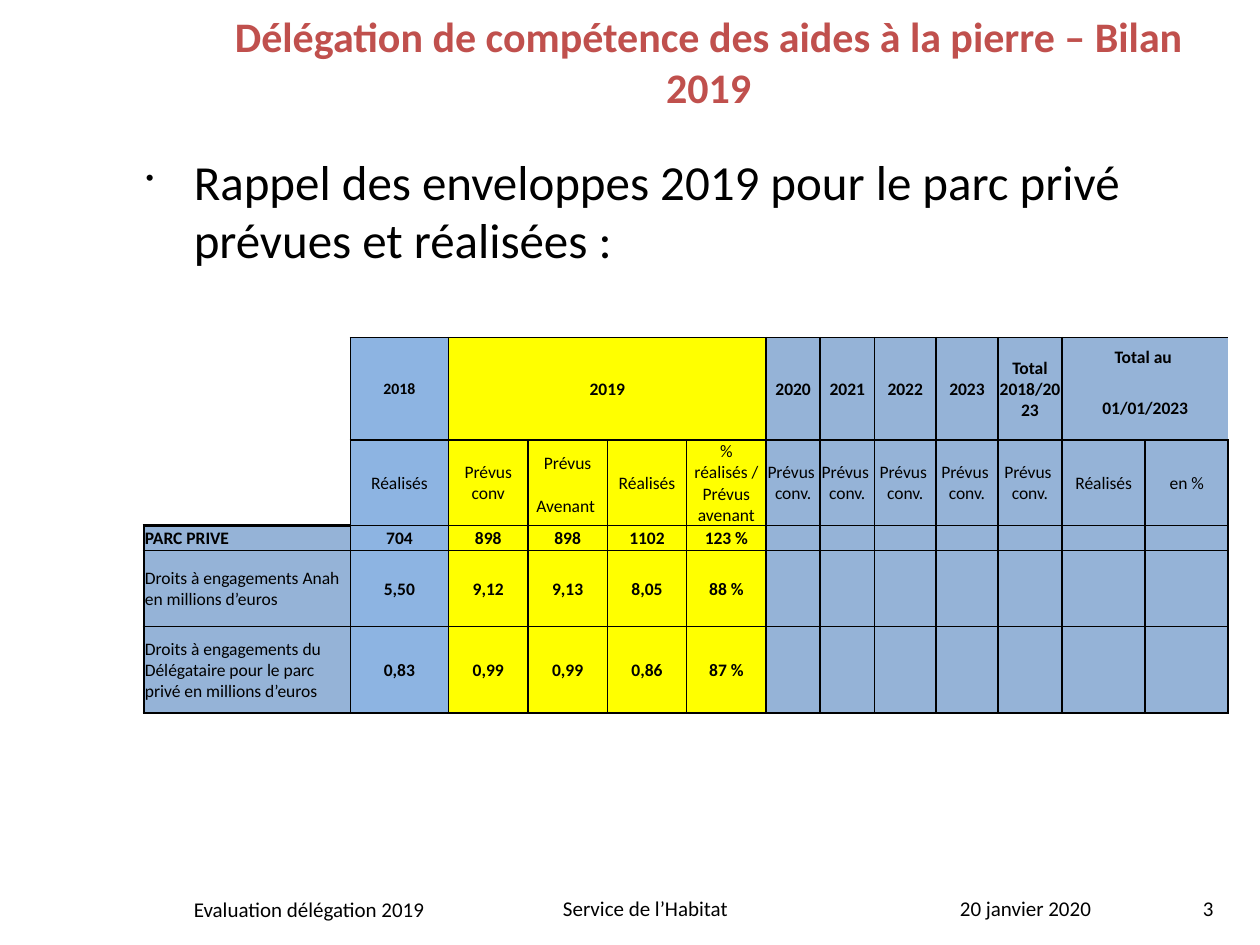
from lxml.etree import SubElement
from pptx import Presentation
from pptx.dml.color import RGBColor
from pptx.enum.text import MSO_ANCHOR as Anchor, PP_ALIGN as Align
from pptx.oxml.ns import qn
from pptx.util import Inches, Pt

BLACK, RED = "000000", "C0504D"
YELLOW, SKY, STEEL = "FFFF00", "8DB4E2", "95B3D7"
COL_WIDTHS = [1.64, 0.78] + [0.63] * 4 + [0.43] * 2 + [0.49] * 2 + [0.51] + [0.66] * 2
ROW_HEIGHTS = [0.3, 0.51, 0.37, 0.31, 0.2, 0.6, 0.69]
COL_FILLS = [STEEL, SKY] + [YELLOW] * 4 + [STEEL] * 7
PLANNED = "Prévus \vconv."
HEADERS = [
    (0, 1, 2, 1, "2018"), (0, 2, 2, 4, "2019"), (0, 6, 2, 1, "2020"),
    (0, 7, 2, 1, "2021"), (0, 8, 2, 1, "2022"), (0, 9, 2, 1, "2023"),
    (0, 10, 2, 1, "Total 2018/2023"),
    (0, 11, 1, 2, "Total au "), (1, 11, 1, 2, "01/01/2023"),
    (2, 1, 2, 1, "Réalisés"), (2, 2, 2, 1, "Prévus conv"),
    (2, 3, 1, 1, "Prévus"), (3, 3, 1, 1, "Avenant "),
    (2, 4, 2, 1, "Réalisés"), (2, 5, 2, 1, "% réalisés / Prévus avenant"),
    *[(2, col, 2, 1, PLANNED) for col in range(6, 11)],
    (2, 11, 2, 1, "Réalisés"), (2, 12, 2, 1, "en %"),
]
RESULTS = [
    ["PARC PRIVE", "704", "898", "898", "1102", "123 %"],
    ["Droits à engagements Anah en millions d’euros",
     "5,50", "9,12", "9,13", "8,05", "88 %"],
    ["Droits à engagements du Délégataire pour le parc privé en millions d’euros",
     "0,83", "0,99", "0,99", "0,86", "87 %"],
]
OPEN_BELOW = {(0, 11), (2, 3)}
OPEN_ABOVE = {(1, 11), (3, 3)}


def rgb(color):
    return RGBColor.from_string(color)


def set_font(p, size, color=BLACK, bold=False):
    p.font.name = "Calibri"
    p.font.size = Pt(size)
    p.font.bold = bold
    p.font.color.rgb = rgb(color)


def add_text(slide, box, text, size, color=BLACK, bold=False,
             align=Align.LEFT, anchor=Anchor.TOP):
    tf = slide.shapes.add_textbox(*map(Inches, box)).text_frame
    tf.word_wrap = True
    tf.vertical_anchor = anchor
    p = tf.paragraphs[0]
    p.text = text
    p.alignment = align
    set_font(p, size, color, bold)
    return p


def add_bullet_text(slide, box, text, size):
    p = add_text(slide, box, text, size)
    pPr = p._p.get_or_add_pPr()
    pPr.set("marL", str(Inches(0.38)))
    pPr.set("indent", str(Inches(-0.38)))
    bullet_size = pPr.makeelement(qn("a:buSzPct"), {"val": "48000"})
    bullet = pPr.makeelement(qn("a:buChar"), {"char": "•"})
    pPr.insert(0, bullet_size)
    pPr.insert(1, bullet)


def set_border(cell, edge, width):
    tcPr = cell._tc.get_or_add_tcPr()
    line = tcPr.makeelement(qn(f"a:ln{edge}"), {"w": str(Pt(width))})
    if width:
        fill = SubElement(line, qn("a:solidFill"))
        SubElement(fill, qn("a:srgbClr"), val=BLACK)
    else:
        SubElement(line, qn("a:noFill"))
    tcPr.insert("LRTB".index(edge), line)


def border_widths(row, col, rows):
    if (row, col) == (0, 0):
        return {"L": 0, "R": 1, "T": 0, "B": 1.5}
    last = row + rows == len(ROW_HEIGHTS)
    return {
        "L": 1.5 if col == 0 else 1,
        "R": 1.5 if col == 12 else 1,
        "T": 0 if (row, col) in OPEN_ABOVE else 1.5 if (row, col) == (4, 0) else 1,
        "B": 0 if (row, col) in OPEN_BELOW else 1.5 if last and col < 5 else 1,
    }


def fill_cell(table, row, col, rows, cols, text):
    origin = table.cell(row, col)
    if rows * cols > 1:
        origin.merge(table.cell(row + rows - 1, col + cols - 1))
    widths = border_widths(row, col, rows)
    for r in range(row, row + rows):
        for c in range(col, col + cols):
            cell = table.cell(r, c)
            cell.margin_left = cell.margin_right = cell.margin_top = Inches(0.01)
            cell.margin_bottom = 0
            cell.vertical_anchor = Anchor.MIDDLE
            if (row, col) == (0, 0):
                cell.fill.background()
            else:
                cell.fill.solid()
                cell.fill.fore_color.rgb = rgb(COL_FILLS[col])
            outer = {"L": c == col, "R": c == col + cols - 1,
                     "T": r == row, "B": r == row + rows - 1}
            for edge in "LRTB":
                set_border(cell, edge, widths[edge] if outer[edge] else 0)
            p = cell.text_frame.paragraphs[0]
            if (r, c) != (row, col) or not text:
                SubElement(p._p, qn("a:endParaRPr"), sz="1000")
    if text:
        p = origin.text_frame.paragraphs[0]
        p.text = text
        p.alignment = Align.CENTER if col else Align.LEFT
        bold = row < 2 or row == 4 or (row > 4 and col > 0)
        set_font(p, 9 if text == "2018" else 10, bold=bold)


def add_results_table(slide):
    frame = slide.shapes.add_table(
        len(ROW_HEIGHTS), len(COL_WIDTHS), Inches(1.14), Inches(2.68),
        Inches(sum(COL_WIDTHS)), Inches(sum(ROW_HEIGHTS)))
    table = frame.table
    table.first_row = table.horz_banding = False
    for column, width in zip(table.columns, COL_WIDTHS):
        column.width = Inches(width)
    for row, height in zip(table.rows, ROW_HEIGHTS):
        row.height = Inches(height)
    fill_cell(table, 0, 0, 4, 1, "")
    for header in HEADERS:
        fill_cell(table, *header)
    for row, values in enumerate(RESULTS, 4):
        for col, text in enumerate(values + [""] * 7):
            fill_cell(table, row, col, 1, 1, text)


def main():
    prs = Presentation()
    prs.slide_width, prs.slide_height = Inches(10), Inches(7.5)
    slide = prs.slides.add_slide(prs.slide_layouts[6])
    add_text(slide, (1.44, 7.07, 2.6, 0.3), "Evaluation délégation 2019", 12)
    add_text(slide, (4.37, 7.06, 2.84, 0.3), "Service de l’Habitat", 12)
    add_text(slide, (7.52, 7.06, 1.58, 0.3), "20 janvier 2020", 12)
    add_text(slide, (8.97, 7.06, 0.76, 0.31), "3", 12, align=Align.RIGHT)
    add_bullet_text(slide, (1.06, 1.15, 8.66, 5.67),
                    "Rappel des enveloppes 2019 pour le parc privé prévues et réalisées :", 28)
    add_results_table(slide)
    add_text(slide, (1.53, 0.13, 8.19, 0.71),
             "Délégation de compétence des aides à la pierre – Bilan 2019",
             24, RED, True, Align.CENTER, Anchor.MIDDLE)
    prs.save("out.pptx")


if __name__ == "__main__":
    main()
